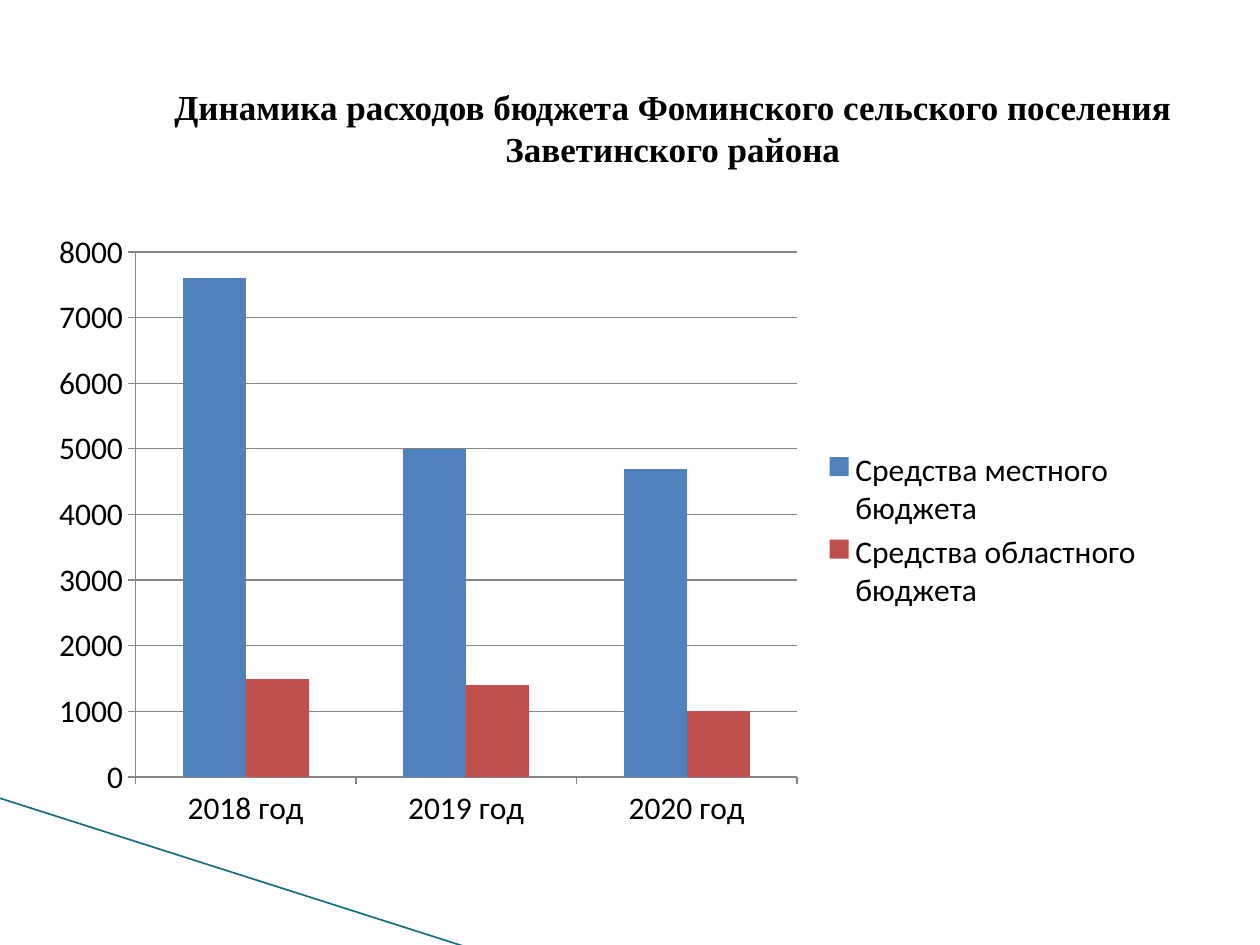
from dataclasses import dataclass

from lxml import etree
from pptx import Presentation
from pptx.chart.data import CategoryChartData
from pptx.dml.color import RGBColor
from pptx.enum.chart import XL_CHART_TYPE, XL_LEGEND_POSITION, XL_TICK_MARK
from pptx.enum.shapes import MSO_CONNECTOR
from pptx.enum.text import MSO_ANCHOR, PP_ALIGN
from pptx.oxml.ns import qn
from pptx.util import Pt

COLUMN = XL_CHART_TYPE.COLUMN_CLUSTERED
RIGHT = XL_LEGEND_POSITION.RIGHT
OUTSIDE = XL_TICK_MARK.OUTSIDE
STRAIGHT = MSO_CONNECTOR.STRAIGHT
MIDDLE = MSO_ANCHOR.MIDDLE
CENTER = PP_ALIGN.CENTER


@dataclass(frozen=True)
class Theme:
    ink: str = "000000"
    axis: str = "868686"
    accent: str = "156D83"
    local: str = "4F81BD"
    region: str = "C0504D"
    head: str = "Times New Roman"
    body: str = "Calibri"
    title: int = 20
    label: int = 18


THEME = Theme()
YEARS = ["2018 год", "2019 год", "2020 год"]
FUNDS = [
    ("Средства местного бюджета", [7600, 5000, 4700], THEME.local),
    ("Средства областного бюджета", [1500, 1400, 1000], THEME.region),
]


def style(font, face, size, color, bold=False):
    font.name = face
    font.size = Pt(size)
    font.bold = bold
    font.color.rgb = RGBColor.from_string(color)


def stroke(line, color, width):
    line.color.rgb = RGBColor.from_string(color)
    line.width = Pt(width)


def add_text(slide, box, text, *, face, size, color, bold=False, align=CENTER):
    frame = slide.shapes.add_textbox(*map(Pt, box)).text_frame
    frame.word_wrap = True
    frame.vertical_anchor = MIDDLE
    par = frame.paragraphs[0]
    par.alignment = align
    run = par.add_run()
    run.text = text
    style(run.font, face, size, color, bold)


def add_slope(slide, box):
    """Draw the accent line from the top left to the bottom right of box."""
    left, top, width, height = box
    ends = left, top, left + width, top + height
    line = slide.shapes.add_connector(STRAIGHT, *map(Pt, ends))
    stroke(line.line, THEME.accent, 0.95)
    etree.SubElement(line._element.spPr, qn("a:effectLst"))


def add_bars(slide, box):
    data = CategoryChartData()
    data.categories = YEARS
    for name, sums, _ in FUNDS:
        data.add_series(name, sums)
    chart = slide.shapes.add_chart(COLUMN, *map(Pt, box), data).chart
    chart.has_title = False
    style(chart.font, THEME.body, THEME.label, THEME.ink)

    plot = chart.plots[0]
    plot.gap_width = 150
    plot.overlap = 0
    plot.vary_by_categories = False
    for bars, (_, _, color) in zip(plot.series, FUNDS):
        bars.format.fill.solid()
        bars.format.fill.fore_color.rgb = RGBColor.from_string(color)

    for axis in (chart.category_axis, chart.value_axis):
        axis.major_tick_mark = OUTSIDE
        style(axis.tick_labels.font, THEME.body, THEME.label, THEME.ink)
        stroke(axis.format.line, THEME.axis, 0.75)
    scale = chart.value_axis
    scale.minimum_scale, scale.maximum_scale, scale.major_unit = 0, 8000, 1000
    stroke(scale.major_gridlines.format.line, THEME.axis, 0.75)

    chart.has_legend = True
    chart.legend.position = RIGHT
    chart.legend.include_in_layout = False
    style(chart.legend.font, THEME.body, THEME.label, THEME.ink)


def main():
    deck = Presentation()
    deck.slide_width, deck.slide_height = Pt(720), Pt(540)
    slide = deck.slides.add_slide(deck.slide_layouts[6])
    add_slope(slide, (-0.5, 456, 268, 85.5))
    add_text(
        slide, (90, 28, 589, 90),
        "Динамика расходов бюджета Фоминского сельского поселения "
        "Заветинского района",
        face=THEME.head, size=THEME.title, color=THEME.ink, bold=True,
    )
    add_bars(slide, (21, 126, 640, 354))
    deck.save("out.pptx")


if __name__ == "__main__":
    main()
